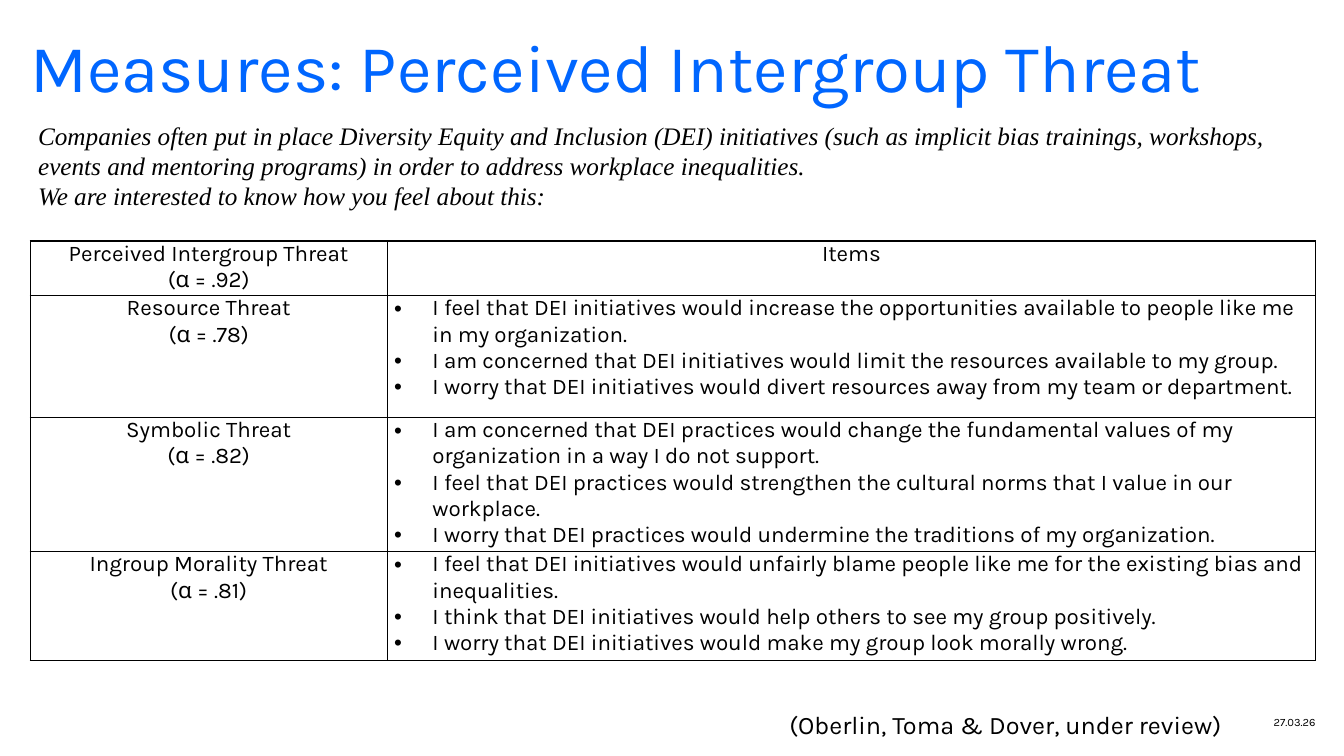
from lxml import etree
from pptx import Presentation
from pptx.dml.color import RGBColor
from pptx.enum import text as t
from pptx.oxml import ns
from pptx.util import Inches, Pt

BLACK, BLUE = "000000", "0066FF"


def add_run(paragraph, words, size, color=BLACK, font="Karla", italic=None):
    run = paragraph.add_run()
    run.text = words
    run.font.size, run.font.name, run.font.italic = Pt(size), font, italic
    run.font.color.rgb = RGBColor.from_string(color)


def add_element(parent, tag, **attributes):
    return etree.SubElement(parent, ns.qn(tag), attributes)


deck = Presentation()
deck.slide_width, deck.slide_height = Inches(13.33), Inches(7.5)
slide = deck.slides.add_slide(deck.slide_layouts[5])

title = slide.shapes.title
title.left, title.top, title.width, title.height = (
    Inches(v) for v in (0.3, 0.34, 12.75, 1.47))
heading = title.text_frame
heading.margin_left = heading.margin_top = heading.margin_right = heading.margin_bottom = 0
heading.vertical_anchor = t.MSO_ANCHOR.TOP
heading.auto_size = t.MSO_AUTO_SIZE.NONE
heading.paragraphs[0].alignment = t.PP_ALIGN.LEFT
heading.paragraphs[0].line_spacing = 0.9
add_run(heading.paragraphs[0], "Measures: Perceived Intergroup Threat", 48, BLUE)

# Scale table: (label, reliability, items, row height, tab stop)
scales = [
    ("Resource Threat", "(α = .78)", [
        "I feel that DEI initiatives would increase the opportunities available to people like me in my organization.",
        "I am concerned that DEI initiatives would limit the resources available to my group.",
        "I worry that DEI initiatives would divert resources away from my team or department.",
    ], 1.21, 0.25),
    ("Symbolic Threat", "(α = .82)", [
        "I am concerned that DEI practices would change the fundamental values of my organization in a way I do not support.",
        "I feel that DEI practices would strengthen the cultural norms that I value in our workplace.",
        "I worry that DEI practices would undermine the traditions of my organization.",
    ], 1.33, 0.5),
    ("Ingroup Morality Threat", "(α = .81)", [
        "I feel that DEI initiatives would unfairly blame people like me for the existing bias and inequalities.",
        "I think that DEI initiatives would help others to see my group positively.",
        "I worry that DEI initiatives would make my group look morally wrong.",
    ], 1.08, 0.25),
]
rows = [("Perceived Intergroup Threat", "(α = .92)", ["Items"], 0.54, None)] + scales

table = slide.shapes.add_table(
    len(rows), 2, Inches(0.3), Inches(2.39), Inches(12.75), Inches(4.16)).table
table.first_row = table.horz_banding = False
table.columns[0].width, table.columns[1].width = Inches(3.54), Inches(9.21)

for r, (label, alpha, items, height, tab) in enumerate(rows):
    table.rows[r].height = Inches(height)
    for c, lines in enumerate([[label, alpha], items]):
        cell = table.cell(r, c)
        cell.margin_left = cell.margin_right = Inches(0.07)
        cell.margin_top = cell.margin_bottom = 0
        properties = cell._tc.get_or_add_tcPr()
        for side in "LRTB":
            border = add_element(properties, f"a:ln{side}", w=str(Pt(1)))
            add_element(add_element(border, "a:solidFill"), "a:srgbClr", val=BLACK)
        cell.fill.background()

        for n, line in enumerate(lines):
            frame = cell.text_frame
            paragraph = frame.add_paragraph() if n else frame.paragraphs[0]
            if c == 1 and tab:
                layout = paragraph._p.get_or_add_pPr()
                layout.set("marL", str(Inches(0.38)))
                layout.set("indent", str(Inches(-0.38)))
                add_element(layout, "a:buFont", typeface="Arial")
                add_element(layout, "a:buChar", char="•")
                add_element(add_element(layout, "a:tabLst"), "a:tab",
                            pos=str(Inches(tab)), algn="l")
            else:
                paragraph.alignment = t.PP_ALIGN.CENTER
            add_run(paragraph, line, 16)

intro = slide.shapes.add_textbox(
    Inches(0.28), Inches(1.14), Inches(12.74), Inches(1.01)).text_frame
intro.word_wrap = True
add_run(intro.paragraphs[0],
        "Companies often put in place Diversity Equity and Inclusion (DEI) initiatives "
        "(such as implicit bias trainings, workshops, events and mentoring programs) "
        "in order to address workplace inequalities.",
        18, font="Times New Roman", italic=True)
add_run(intro.add_paragraph(), "We are interested to know how you feel about this:",
        18, font="Times New Roman", italic=True)

citation = slide.shapes.add_textbox(
    Inches(7.73), Inches(6.99), Inches(4.8), Inches(0.4)).text_frame
citation.word_wrap = True
add_run(citation.paragraphs[0], "(Oberlin, Toma & Dover, under review)", 18)

date = slide.shapes.add_textbox(
    Inches(11.93), Inches(6.84), Inches(1.12), Inches(0.39)).text_frame
date.margin_left = date.margin_top = date.margin_right = date.margin_bottom = 0
date.word_wrap = True
date.vertical_anchor = t.MSO_ANCHOR.BOTTOM
date.paragraphs[0].alignment = t.PP_ALIGN.RIGHT
add_run(date.paragraphs[0], "27.03.26", 8)

deck.save("out.pptx")
